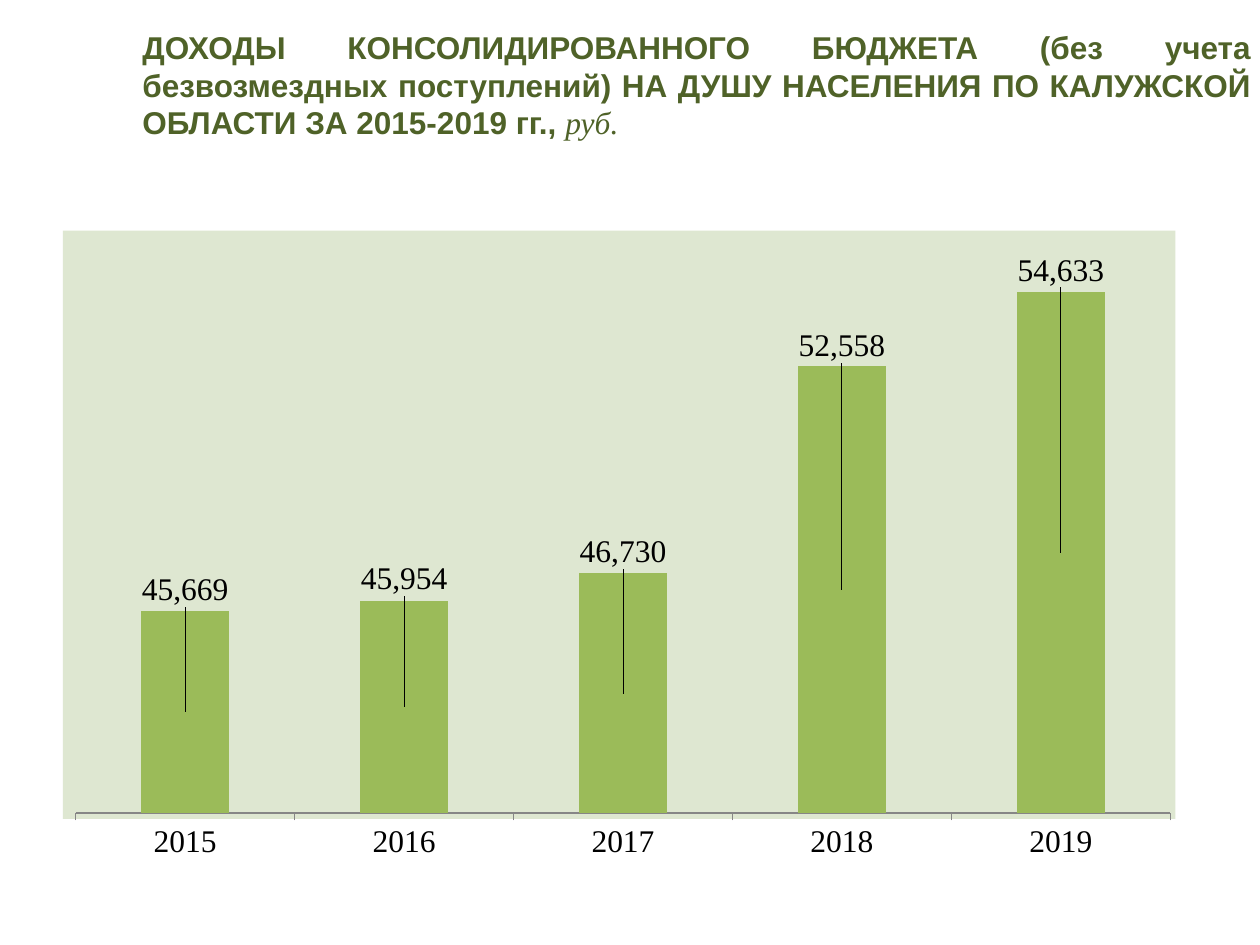
from lxml.etree import fromstring
from pptx import Presentation
from pptx.chart.data import CategoryChartData
from pptx.dml.color import RGBColor
from pptx.enum.chart import XL_CHART_TYPE as ChartType, XL_TICK_MARK as TickMark
from pptx.enum.shapes import MSO_SHAPE as Shape
from pptx.enum.text import MSO_ANCHOR as Anchor, PP_ALIGN as Align
from pptx.oxml.ns import nsdecls, qn
from pptx.util import Inches, Pt

INCOME = {"2015": 45669, "2016": 45954, "2017": 46730, "2018": 52558, "2019": 54633}
AXIS_MIN, AXIS_MAX = 40000, 56000
PLOT_HEIGHT = 0.89  # share of the chart height
LABEL_GAP = 0.03


def color(hex_string):
    return RGBColor.from_string(hex_string)


def layout_xml(**parts):
    """Manual chart layout made of the given elements, in order."""
    inner = "".join(f'<c:{name} val="{value}"/>' for name, value in parts.items())
    return fromstring(f'<c:layout {nsdecls("c")}><c:manualLayout>{inner}</c:manualLayout></c:layout>')


deck = Presentation()
deck.slide_width, deck.slide_height = Inches(10), Inches(7.5)
page = deck.slides.add_slide(deck.slide_layouts[5])

# Panel behind the chart
panel = page.shapes.add_shape(Shape.RECTANGLE, Inches(0.5), Inches(1.83), Inches(8.83), Inches(4.67))
panel.shadow.inherit = False
panel.fill.solid()
panel.fill.fore_color.rgb = color("DEE7D1")
panel.line.fill.background()

# Title
title = page.shapes.title
title.left, title.top, title.width, title.height = Inches(1.03), Inches(0.17), Inches(9), Inches(1.01)
title.text_frame.vertical_anchor = Anchor.TOP
para = title.text_frame.paragraphs[0]
para.alignment = Align.JUSTIFY
para.font.size = Pt(18)
para.font.color.rgb = color("4F6228")
heading = para.add_run()
heading.text = ("ДОХОДЫ КОНСОЛИДИРОВАННОГО БЮДЖЕТА (без учета безвозмездных поступлений) "
                "НА ДУШУ НАСЕЛЕНИЯ ПО КАЛУЖСКОЙ ОБЛАСТИ ЗА 2015-2019 гг., ")
heading.font.name, heading.font.bold = "Arial", True
unit = para.add_run()
unit.text = "руб."
unit.font.name, unit.font.italic = "Times New Roman", True

# Chart
data = CategoryChartData(number_format="#,##0")
data.categories = list(INCOME)
data.add_series("Series 1", list(INCOME.values()))
chart = page.shapes.add_chart(ChartType.COLUMN_STACKED, Inches(0.42), Inches(1.83),
                              Inches(9.05), Inches(5.08), data).chart
chart.has_legend = chart.has_title = False
chart.font.name, chart.font.size = "Calibri", Pt(18)
chart.font.color.rgb = color("000000")

value_axis = chart.value_axis
value_axis.minimum_scale, value_axis.maximum_scale = AXIS_MIN, AXIS_MAX
value_axis.has_major_gridlines = False
value_axis.visible = False
year_axis = chart.category_axis
year_axis.major_tick_mark = TickMark.OUTSIDE
year_axis.format.line.color.rgb = color("868686")
year_axis.tick_labels.font.name = "Times New Roman"
year_axis.tick_labels.font.size = Pt(18)

plot = chart.plots[0]
plot.gap_width, plot.overlap, plot.vary_by_categories = 150, 100, False
bars = plot.series[0]
bars.format.fill.solid()
bars.format.fill.fore_color.rgb = color("9BBB59")
bars.data_labels.show_value = True
bars.data_labels.font.name, bars.data_labels.font.size = "Times New Roman", Pt(18)

plot_area = chart.element.find(".//" + qn("c:plotArea"))
for old_layout in plot_area.findall(qn("c:layout")):
    plot_area.remove(old_layout)
plot_area.insert(0, layout_xml(layoutTarget="inner", xMode="edge", yMode="edge",
                               x=0.02, y=0.02, w=0.96, h=PLOT_HEIGHT))

# Stacked columns centre their labels, so each is lifted above its bar
for index in range(len(INCOME)):
    label_font = bars.points[index].data_label.font
    label_font.name, label_font.size = "Times New Roman", Pt(18)
for label, amount in zip(chart.element.iter(qn("c:dLbl")), INCOME.values()):
    half_bar = (amount - AXIS_MIN) / (AXIS_MAX - AXIS_MIN) * PLOT_HEIGHT / 2
    label.insert(1, layout_xml(x=0, y=round(-half_bar - LABEL_GAP, 2)))

deck.save("out.pptx")
